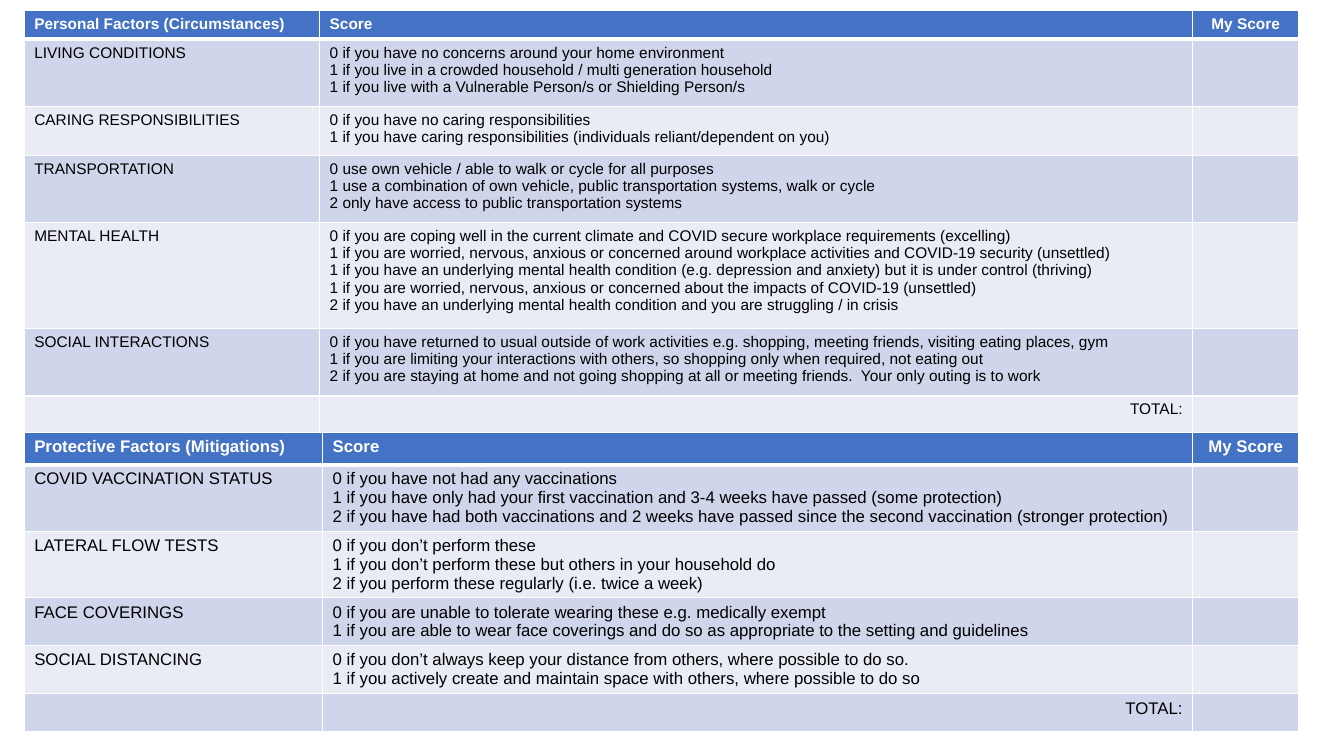
from dataclasses import dataclass

from lxml.etree import SubElement
from pptx import Presentation
from pptx.dml.color import RGBColor
from pptx.enum.text import PP_ALIGN as Align
from pptx.oxml.ns import qn
from pptx.util import Inches, Pt


@dataclass(frozen=True)
class Theme:
    font: str = "Arial"
    header: str = "4472C4"
    bands: tuple = ("CFD5EA", "E9EBF5")
    light: str = "FFFFFF"
    dark: str = "000000"
    personal_size: int = 11
    protective_size: int = 12
    rule: int = 1
    header_rule: int = 3


THEME = Theme()

# Each factor: name and its scoring lines
PERSONAL_FACTORS = [
    ("LIVING CONDITIONS", [
        "0 if you have no concerns around your home environment",
        "1 if you live in a crowded household / multi generation household",
        "1 if you live with a Vulnerable Person/s or Shielding Person/s"]),
    ("CARING RESPONSIBILITIES", [
        "0 if you have no caring responsibilities",
        "1 if you have caring responsibilities (individuals reliant/dependent on you)"]),
    ("TRANSPORTATION", [
        "0 use own vehicle / able to walk or cycle for all purposes",
        "1 use a combination of own vehicle, public transportation systems, walk or cycle",
        "2 only have access to public transportation systems"]),
    ("MENTAL HEALTH", [
        "0 if you are coping well in the current climate and COVID secure workplace requirements (excelling)",
        "1 if you are worried, nervous, anxious or concerned around workplace activities and COVID-19 security (unsettled)",
        "1 if you have an underlying mental health condition (e.g. depression and anxiety) but it is under control (thriving)",
        "1 if you are worried, nervous, anxious or concerned about the impacts of COVID-19 (unsettled)",
        "2 if you have an underlying mental health condition and you are struggling / in crisis"]),
    ("SOCIAL INTERACTIONS", [
        "0 if you have returned to usual outside of work activities e.g. shopping, meeting friends, visiting eating places, gym",
        "1 if you are limiting your interactions with others, so shopping only when required, not eating out",
        "2 if you are staying at home and not going shopping at all or meeting friends.  Your only outing is to work"]),
]
PROTECTIVE_FACTORS = [
    ("COVID VACCINATION STATUS", [
        "0 if you have not had any vaccinations",
        "1 if you have only had your first vaccination and 3-4 weeks have passed (some protection)",
        "2 if you have had both vaccinations and 2 weeks have passed since the second vaccination (stronger protection)"]),
    ("LATERAL FLOW TESTS", [
        "0 if you don’t perform these",
        "1 if you don’t perform these but others in your household do",
        "2 if you perform these regularly (i.e. twice a week)"]),
    ("FACE COVERINGS", [
        "0 if you are unable to tolerate wearing these e.g. medically exempt",
        "1 if you are able to wear face coverings and do so as appropriate to the setting and guidelines"]),
    ("SOCIAL DISTANCING", [
        "0 if you don’t always keep your distance from others, where possible to do so.",
        "1 if you actively create and maintain space with others, where possible to do so"]),
]


def draw_borders(cell, top, bottom):
    """White rules on all four sides; widths in points."""
    properties = cell._tc.get_or_add_tcPr()
    widths = {"lnL": THEME.rule, "lnR": THEME.rule, "lnT": top, "lnB": bottom}
    for side, width in widths.items():
        rule = SubElement(properties, qn(f"a:{side}"), w=str(Pt(width)))
        fill = SubElement(rule, qn("a:solidFill"))
        SubElement(fill, qn("a:srgbClr"), val=THEME.light)


def write_lines(cell, lines, size, color, bold, align):
    for index, line in enumerate(lines):
        frame = cell.text_frame
        paragraph = frame.add_paragraph() if index else frame.paragraphs[0]
        paragraph.alignment = align
        if not line:  # keeps an empty cell from stretching its row
            SubElement(paragraph._p, qn("a:endParaRPr"), sz=str(size * 100))
            continue
        run = paragraph.add_run()
        run.text = line
        run.font.name, run.font.size, run.font.bold = THEME.font, Pt(size), bold
        run.font.color.rgb = RGBColor.from_string(color)


def add_score_table(slide, box, title, factors, widths, heights, size):
    """Header, one banded row per factor, then the total."""
    rows = [([title], ["Score"], ["My Score"])]
    rows += [([name], scores, [""]) for name, scores in factors]
    rows.append(([""], ["TOTAL:"], [""]))
    last = len(rows) - 1

    frame = slide.shapes.add_table(len(rows), len(widths), *map(Inches, box))
    table = frame.table
    for column, width in zip(table.columns, widths):
        column.width = Inches(width)
    for row, height in zip(table.rows, heights):
        row.height = Inches(height)

    for r, row in enumerate(rows):
        is_header = r == 0
        for c, lines in enumerate(row):
            cell = table.cell(r, c)
            draw_borders(cell,
                         top=THEME.header_rule if r == 1 else THEME.rule,
                         bottom=THEME.header_rule if is_header else THEME.rule)
            cell.fill.solid()
            cell.fill.fore_color.rgb = RGBColor.from_string(
                THEME.header if is_header else THEME.bands[(r - 1) % 2])
            align = Align.LEFT
            if is_header and c == 2:
                align = Align.CENTER
            elif r == last and c == 1:
                align = Align.RIGHT
            write_lines(cell, lines, size, THEME.light if is_header else THEME.dark,
                        is_header, align)


def main():
    deck = Presentation()
    deck.slide_width, deck.slide_height = Inches(13.33), Inches(7.5)
    slide = deck.slides.add_slide(deck.slide_layouts[6])

    # Personal factors
    add_score_table(slide, (0.24, 0.1, 12.64, 4.19),
                    "Personal Factors (Circumstances)", PERSONAL_FACTORS,
                    (2.93, 8.66, 1.05), (0.29, 0.67, 0.48, 0.67, 1.05, 0.67, 0.36),
                    THEME.personal_size)
    # Protective factors
    add_score_table(slide, (0.24, 4.29, 12.64, 2.96),
                    "Protective Factors (Mitigations)", PROTECTIVE_FACTORS,
                    (2.96, 8.63, 1.05), (0.32, 0.66, 0.66, 0.47, 0.48, 0.37),
                    THEME.protective_size)
    deck.save("out.pptx")


if __name__ == "__main__":
    main()
